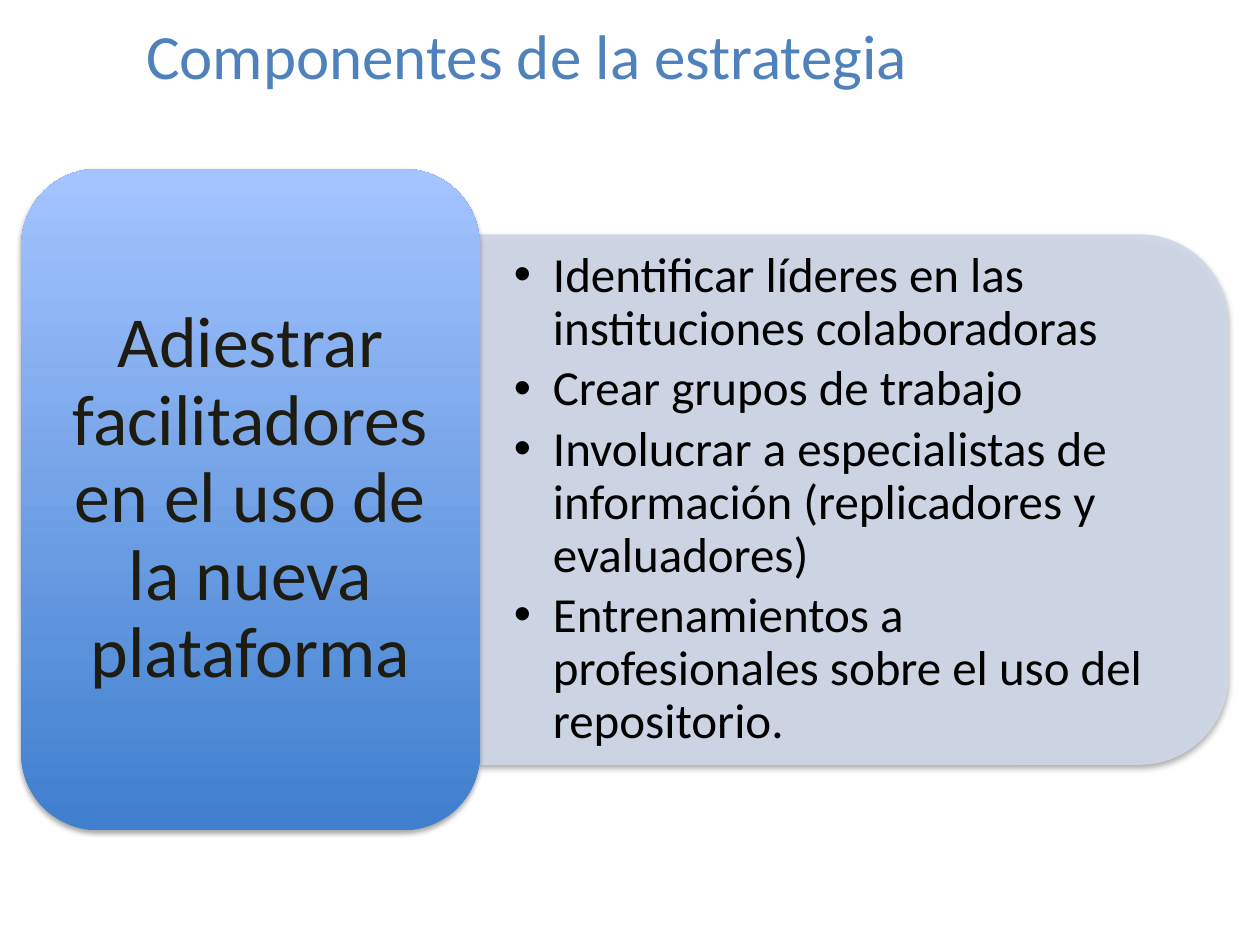
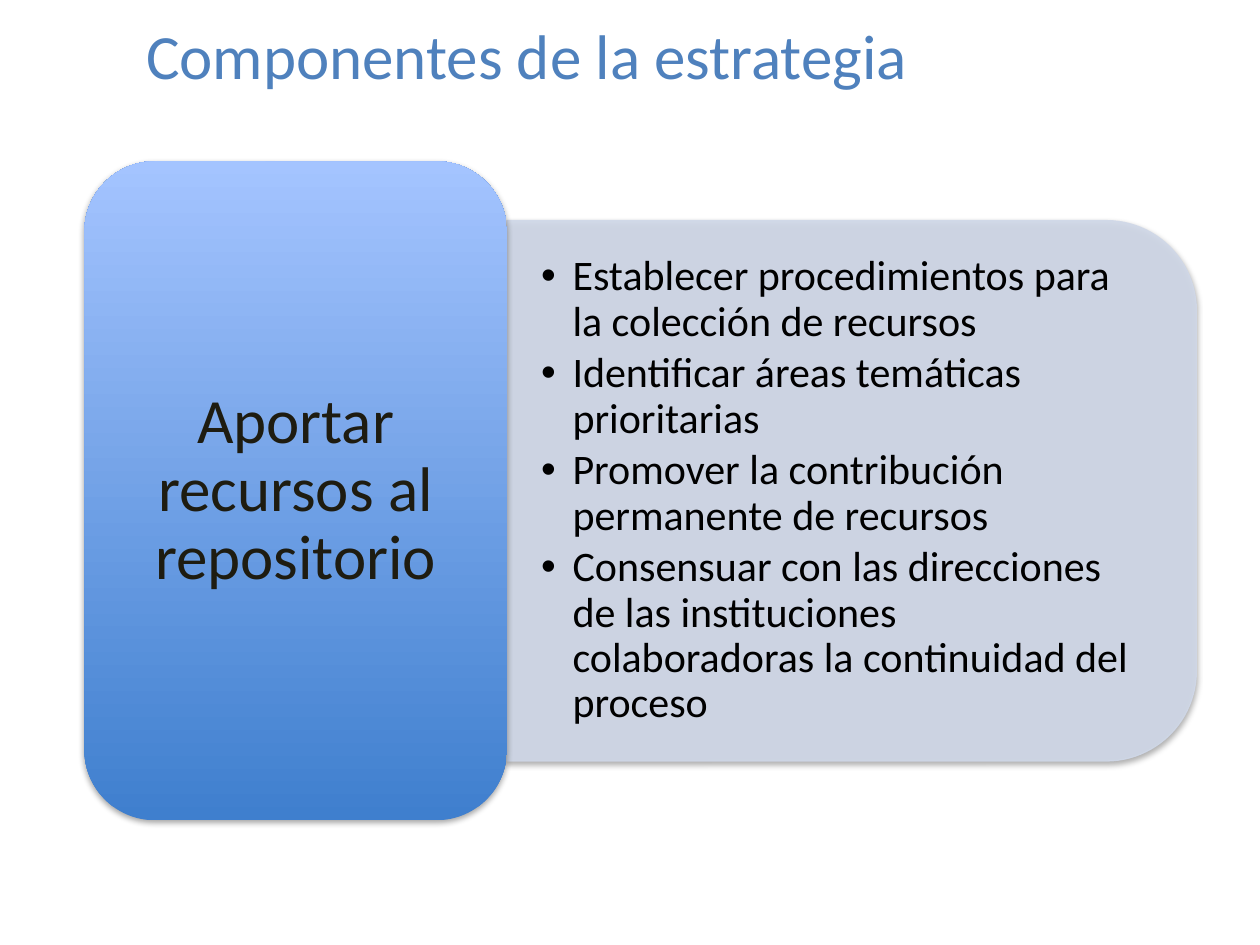
import lxml.etree
import pptx
import pptx.dml.color
import pptx.enum.shapes
import pptx.enum.text
import pptx.oxml.ns
import pptx.util

SLIDE_WIDTH = pptx.util.Inches(10)
SLIDE_HEIGHT = pptx.util.Inches(7.5)
FONT = "Calibri"
TITLE_BLUE = "4F81BD"
PANEL_BLUE = "D0D8E8"
CARD_BOTTOM, CARD_TOP = "3F7FCE", "A4C4FF"
CARD_INK = "1E1C11"
BLACK = "000000"
PANEL_OPACITY = 90
CORNER_INSET = 0.05  # share of the panel height kept clear of its round corners
TITLE = "Componentes de la estrategia"
TITLE_BOX = (10.6, 1.73, 80.9, 8)

# Boxes are left, top, width and height in percent of the slide.
COMPONENTS = [
    dict(
        box=(1.7, 17.87, 95.75, 70), card_share=0.38, panel_share=0.8,
        goal="Adiestrar facilitadores en el uso de la nueva plataforma",
        goal_size=41, goal_insets=(0.17, 0.09),
        actions=[
            "Identificar líderes en las instituciones colaboradoras",
            "Crear grupos de trabajo",
            "Involucrar a especialistas de información (replicadores y evaluadores)",
            "Entrenamientos a profesionales sobre el uso del repositorio.",
        ],
        action_size=28, hanging=0.31,
    ),
    dict(
        box=(6.7, 17.07, 88.25, 69.73), card_share=0.38, panel_share=0.82,
        goal="Aportar recursos al repositorio",
        goal_size=36, goal_insets=(0.15, 0.07),
        actions=[
            "Establecer procedimientos para la colección de recursos",
            "Identificar áreas temáticas prioritarias",
            "Promover la contribución permanente de recursos",
            "Consensuar con las direcciones de las instituciones colaboradoras "
            "la continuidad del proceso",
        ],
        action_size=24, hanging=0.25,
    ),
]


def rgb(hex_color):
    return pptx.dml.color.RGBColor.from_string(hex_color)


def to_emu(box):
    sides = (SLIDE_WIDTH, SLIDE_HEIGHT) * 2
    return [round(share * side / 100) for share, side in zip(box, sides)]


def place(shape, box):
    shape.left, shape.top, shape.width, shape.height = [round(v) for v in box]


def set_opacity(color_parent, percent):
    for color in color_parent.iter(pptx.oxml.ns.qn("a:srgbClr")):
        alpha = lxml.etree.SubElement(color, pptx.oxml.ns.qn("a:alpha"))
        alpha.set("val", str(percent * 1000))


def add_soft_shadow(shape):
    shape.shadow.inherit = False
    effects = shape._element.spPr.find(pptx.oxml.ns.qn("a:effectLst"))
    shadow = lxml.etree.SubElement(
        effects, pptx.oxml.ns.qn("a:outerShdw"),
        blurRad=str(pptx.util.Pt(3.1)), dist=str(pptx.util.Pt(1.8)),
        dir="5400000", rotWithShape="0")
    lxml.etree.SubElement(shadow, pptx.oxml.ns.qn("a:srgbClr"), val=BLACK)
    set_opacity(shadow, 35)


def set_frame(frame, horizontal, vertical):
    """Centre the text vertically, wrapped, with insets in inches."""
    frame.word_wrap = True
    frame.auto_size = pptx.enum.text.MSO_AUTO_SIZE.NONE
    frame.vertical_anchor = pptx.enum.text.MSO_ANCHOR.MIDDLE
    frame.margin_left = frame.margin_right = pptx.util.Inches(horizontal)
    frame.margin_top = frame.margin_bottom = pptx.util.Inches(vertical)


def add_text(paragraph, text, size, color, align):
    paragraph.alignment = align
    run = paragraph.add_run()
    run.text = text
    run.font.name = FONT
    run.font.size = pptx.util.Pt(size)
    run.font.color.rgb = rgb(color)


def fill_title(slide):
    title = slide.shapes.title
    place(title, to_emu(TITLE_BOX))
    set_frame(title.text_frame, 0.1, 0.05)
    add_text(title.text_frame.paragraphs[0], TITLE, 36, TITLE_BLUE,
             pptx.enum.text.PP_ALIGN.LEFT)


def add_panel(slide, box):
    """Add a panel rounded on its right side, made by a quarter turn."""
    left, top, width, height = box
    turned = (left + (width - height) / 2, top + (height - width) / 2, height, width)
    panel = slide.shapes.add_shape(
        pptx.enum.shapes.MSO_SHAPE.ROUND_2_SAME_RECTANGLE,
        *[round(v) for v in turned])
    panel.rotation = 90
    panel.fill.solid()
    panel.fill.fore_color.rgb = rgb(PANEL_BLUE)
    panel.line.color.rgb = rgb(PANEL_BLUE)
    panel.line.width = pptx.util.Pt(0.75)
    set_opacity(panel._element.spPr, PANEL_OPACITY)
    add_soft_shadow(panel)


def fill_actions(slide, panel_box, actions, size, hanging):
    left, top, width, height = panel_box
    inset = CORNER_INSET * height
    body = slide.placeholders[1]
    place(body, (left, top + inset, width - inset, height - 2 * inset))
    slide.shapes._spTree.append(body._element)  # bring in front of the panel
    frame = body.text_frame
    set_frame(frame, 0.27, 0.14)
    indent = pptx.util.Inches(hanging)
    for index, action in enumerate(actions):
        paragraph = frame.add_paragraph() if index else frame.paragraphs[0]
        properties = paragraph._p.get_or_add_pPr()
        properties.set("marL", str(indent))
        properties.set("indent", str(-indent))
        paragraph.line_spacing = 0.9
        paragraph.space_before = pptx.util.Pt(0)
        paragraph.space_after = pptx.util.Pt(0.15 * size)
        add_text(paragraph, action, size, BLACK, pptx.enum.text.PP_ALIGN.LEFT)


def add_goal_card(slide, box, goal, size, insets):
    card = slide.shapes.add_shape(
        pptx.enum.shapes.MSO_SHAPE.ROUNDED_RECTANGLE, *[round(v) for v in box])
    card.fill.gradient()
    card.fill.gradient_angle = 90
    for stop, color in zip(card.fill.gradient_stops, (CARD_BOTTOM, CARD_TOP)):
        stop.color.rgb = rgb(color)
    card.line.fill.background()
    add_soft_shadow(card)
    set_frame(card.text_frame, *insets)
    paragraph = card.text_frame.paragraphs[0]
    paragraph.line_spacing = 0.9
    add_text(paragraph, goal, size, CARD_INK, pptx.enum.text.PP_ALIGN.CENTER)


def add_component_slide(deck, component):
    slide = deck.slides.add_slide(deck.slide_layouts[1])
    fill_title(slide)
    left, top, width, height = to_emu(component["box"])
    card_width = component["card_share"] * width
    panel_height = component["panel_share"] * height
    panel_box = (left + card_width, top + (height - panel_height) / 2,
                 width - card_width, panel_height)
    add_panel(slide, panel_box)
    fill_actions(slide, panel_box, component["actions"],
                 component["action_size"], component["hanging"])
    add_goal_card(slide, (left, top, card_width, height), component["goal"],
                  component["goal_size"], component["goal_insets"])


def main():
    deck = pptx.Presentation()
    deck.slide_width, deck.slide_height = SLIDE_WIDTH, SLIDE_HEIGHT
    for component in COMPONENTS:
        add_component_slide(deck, component)
    deck.save("out.pptx")


if __name__ == "__main__":
    main()
